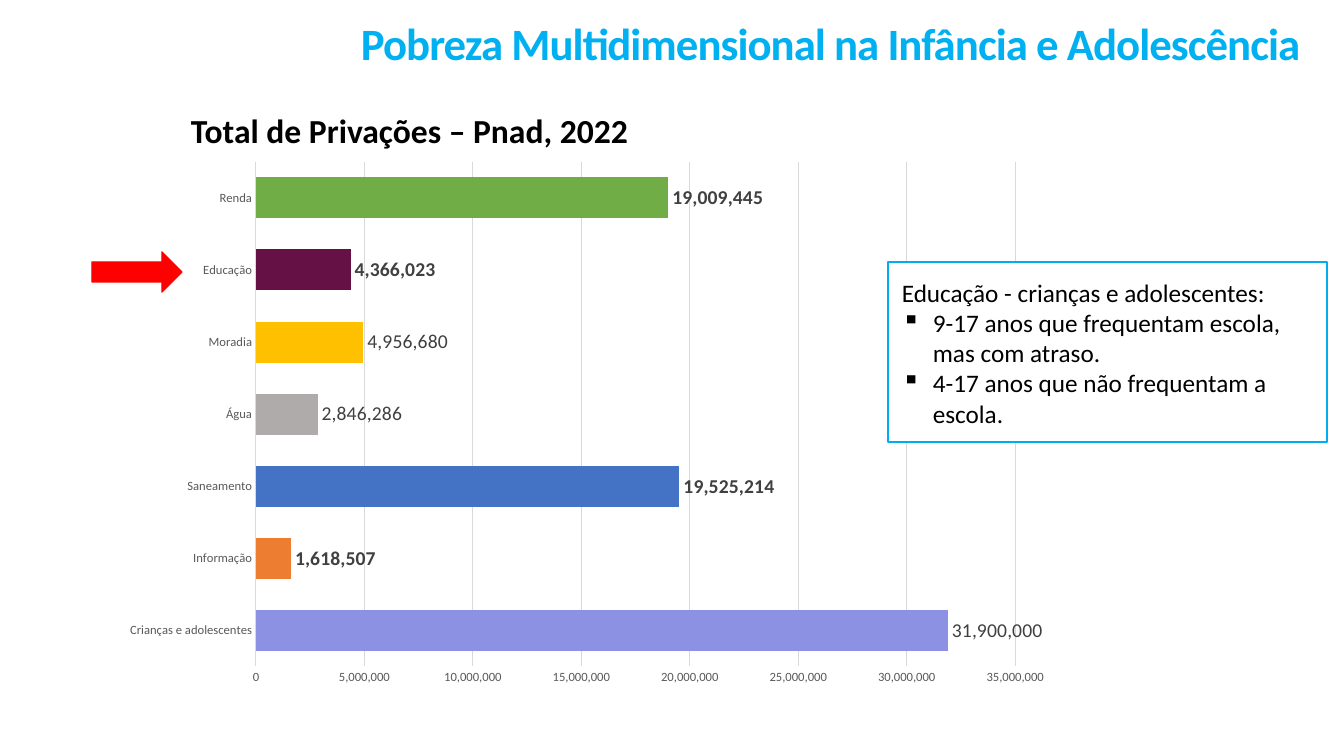
from lxml import etree
from pptx import Presentation
from pptx.chart.data import CategoryChartData
from pptx.dml.color import RGBColor
from pptx.enum.chart import XL_CHART_TYPE, XL_LABEL_POSITION, XL_TICK_MARK
from pptx.enum.shapes import MSO_SHAPE
from pptx.enum.text import MSO_ANCHOR, PP_ALIGN
from pptx.oxml.ns import qn
from pptx.util import Emu, Pt

BAR = XL_CHART_TYPE.BAR_CLUSTERED
OUTSIDE = XL_LABEL_POSITION.OUTSIDE_END
NO_TICK = XL_TICK_MARK.NONE
RECT, ARROW = MSO_SHAPE.RECTANGLE, MSO_SHAPE.RIGHT_ARROW
TOP, MIDDLE = MSO_ANCHOR.TOP, MSO_ANCHOR.MIDDLE
LEFT, RIGHT = PP_ALIGN.LEFT, PP_ALIGN.RIGHT

FONT = "Calibri"
COLORS = {
    "title": "00B0F0", "text": "000000", "white": "FFFFFF", "red": "FF0000",
    "border": "00ADEE", "axis": "595959", "grid": "D9D9D9", "label": "404040",
    "series": "5B9BD5", "lilac": "8D91E3", "orange": "ED7D31", "blue": "4472C4",
    "grey": "AFABAB", "yellow": "FFC000", "wine": "651145", "green": "70AD47",
}

# Category, value, bar colour, bold label; from the bottom bar up
DEPRIVATIONS = [
    ("Crianças e adolescentes", 31900000, "lilac", False),
    ("Informação", 1618507, "orange", True),
    ("Saneamento", 19525214, "blue", True),
    ("Água", 2846286, "grey", False),
    ("Moradia", 4956680, "yellow", False),
    ("Educação", 4366023, "wine", True),
    ("Renda", 19009445, "green", True),
]


def px(n):
    return Emu(round(n * 914400 / 100.8))


def rgb(name):
    return RGBColor.from_string(COLORS[name])


def style_font(font, size, color, bold=False):
    font.name, font.size, font.bold = FONT, Pt(size), bold
    font.color.rgb = rgb(color)


def add_line(tf, text, first=False, size=18, color="text", bold=False,
             align=LEFT, bullet=None, spacing=None):
    p = tf.paragraphs[0] if first else tf.add_paragraph()
    p.alignment = align
    if bullet:
        pPr = p._p.get_or_add_pPr()
        pPr.set("marL", str(px(31)))
        pPr.set("indent", str(-px(31)))
        etree.SubElement(pPr, qn("a:buChar")).set("char", bullet)
    r = p.add_run()
    r.text = text
    style_font(r.font, size, color, bold)
    if spacing:
        r.font._element.set("spc", str(spacing))


class Slide:
    def __init__(self, prs):
        self.s = prs.slides.add_slide(prs.slide_layouts[6])

    def shape(self, kind, x, y, w, h, fill, line=None):
        sp = self.s.shapes.add_shape(kind, px(x), px(y), px(w), px(h))
        sp.shadow.inherit = False
        sp.fill.solid()
        sp.fill.fore_color.rgb = rgb(fill)
        if line:
            sp.line.color.rgb = rgb(line)
            sp.line.width = Pt(1)
        else:
            sp.line.fill.background()
        return sp

    def text(self, x, y, w, h):
        tf = self.s.shapes.add_textbox(px(x), px(y), px(w), px(h)).text_frame
        tf.word_wrap = True
        tf.vertical_anchor = TOP
        return tf

    def bar_chart(self, x, y, w, h, rows):
        data = CategoryChartData(number_format="#,##0")
        data.categories = [row[0] for row in rows]
        data.add_series("Series 1", [row[1] for row in rows])
        chart = self.s.shapes.add_chart(BAR, px(x), px(y), px(w), px(h), data).chart
        chart.has_legend = chart.has_title = False
        style_font(chart.font, 9, "text")

        # Axes
        for axis in (chart.category_axis, chart.value_axis):
            axis.major_tick_mark = axis.minor_tick_mark = NO_TICK
            style_font(axis.tick_labels.font, 9, "axis")
        values = chart.value_axis
        values.minimum_scale, values.maximum_scale = 0, 35000000
        values.major_unit = 5000000
        values.tick_labels.number_format = "#,##0"
        values.tick_labels.number_format_is_linked = False
        values.format.line.fill.background()
        values.has_major_gridlines = True
        for line in (chart.category_axis.format.line,
                     values.major_gridlines.format.line):
            line.color.rgb = rgb("grid")
            line.width = Pt(0.75)

        # Bars and labels
        plot = chart.plots[0]
        plot.gap_width = 76
        plot.vary_by_categories = False
        series = plot.series[0]
        series.format.fill.solid()
        series.format.fill.fore_color.rgb = rgb("series")
        labels = series.data_labels
        labels.show_value = True
        labels.number_format = "#,##0"
        labels.number_format_is_linked = False
        labels.position = OUTSIDE
        style_font(labels.font, 14, "label", True)
        for i, (_, _, color, bold) in enumerate(rows):
            point = series.points[i]
            point.format.fill.solid()
            point.format.fill.fore_color.rgb = rgb(color)
            if not bold:
                style_font(point.data_label.font, 14, "label")
                point.data_label.position = OUTSIDE


def main():
    prs = Presentation()
    prs.slide_width, prs.slide_height = px(1344), px(756)
    slide = Slide(prs)

    # Title
    tf = slide.text(34, 11, 1276, 65)
    add_line(tf, "Pobreza Multidimensional na Infância e Adolescência", first=True,
             size=32, color="title", bold=True, align=RIGHT, spacing=-70)

    # Chart with its heading
    slide.bar_chart(111, 151, 952, 545, DEPRIVATIONS)
    tf = slide.shape(RECT, 181, 116, 510, 29, "white").text_frame
    tf.word_wrap = True
    tf.vertical_anchor = MIDDLE
    add_line(tf, "Total de Privações – Pnad, 2022", first=True, size=24, bold=True)

    # Arrow to the education bar
    slide.shape(ARROW, 92, 252, 90, 40, "red", "red")

    # Education note
    slide.shape(RECT, 888, 262, 439, 180, "white", "border")
    tf = slide.text(892, 272, 439, 163)
    add_line(tf, "Educação - crianças e adolescentes:", first=True)
    for item in ("9-17 anos que frequentam escola, mas com atraso.",
                 "4-17 anos que não frequentam a escola."):
        add_line(tf, item, bullet="▪")

    prs.save("out.pptx")


if __name__ == "__main__":
    main()
